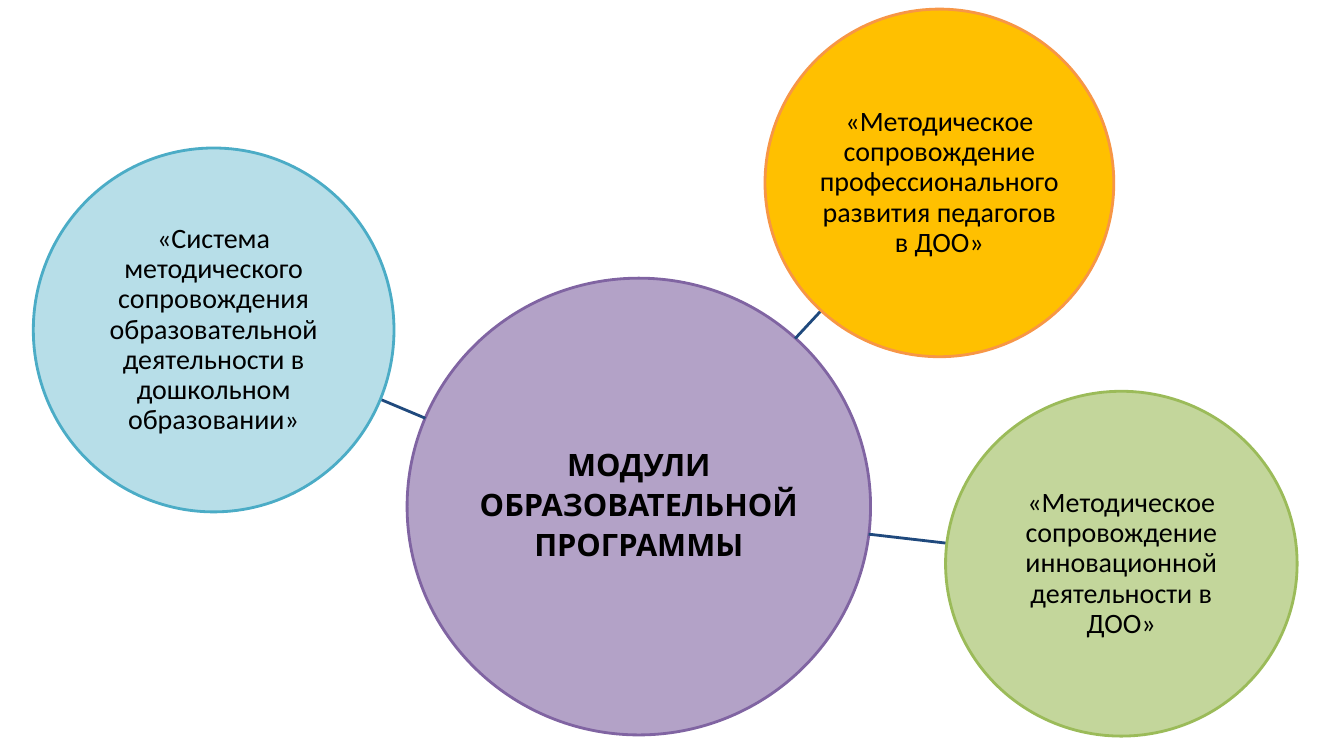
"""Build a slide with a central circle and the three programme modules around it."""
import pptx
import pptx.dml.color
import pptx.enum.shapes
import pptx.enum.text
import pptx.oxml.ns
import pptx.util
from lxml import etree

Cm = pptx.util.Cm
Pt = pptx.util.Pt
RGBColor = pptx.dml.color.RGBColor

BLACK = RGBColor(0x00, 0x00, 0x00)
NAVY = RGBColor(0x1F, 0x49, 0x7D)
PURPLE = RGBColor(0x80, 0x64, 0xA2)
LIGHT_PURPLE = RGBColor(0xB3, 0xA2, 0xC7)
ORANGE = RGBColor(0xF7, 0x96, 0x46)
GOLD = RGBColor(0xFF, 0xC0, 0x00)
GREEN = RGBColor(0x9B, 0xBB, 0x59)
LIGHT_GREEN = RGBColor(0xC3, 0xD6, 0x9B)
TEAL = RGBColor(0x4B, 0xAC, 0xC6)
LIGHT_TEAL = RGBColor(0xB7, 0xDE, 0xE8)

LINE_WIDTH = Pt(2)
CENTRE = ["МОДУЛИ", "ОБРАЗОВАТЕЛЬНОЙ", "ПРОГРАММЫ"]
MODULES = [
    ("«Методическое сопровождение профессионального развития педагогов в ДОО»",
     (19.28, 0.23, 8.79, 8.76), GOLD, ORANGE, (20.04, 8.53, 20.7, 7.82)),
    ("«Методическое сопровождение инновационной деятельности в ДОО»",
     (23.83, 9.86, 8.86, 8.69), LIGHT_GREEN, GREEN, (21.89, 13.46, 23.88, 13.69)),
    ("«Система методического сопровождения образовательной деятельности "
     "в дошкольном образовании»",
     (0.84, 3.73, 9.09, 9.17), LIGHT_TEAL, TEAL, (10.72, 10.54, 9.58, 10.06)),
]


def add_circle(s, lines, box, fill, outline, font="Calibri", size=20, bold=False):
    """Add an ellipse with one centred paragraph per line."""
    sp = s.shapes.add_shape(pptx.enum.shapes.MSO_SHAPE.OVAL, *map(Cm, box))
    sp.shadow.inherit = False
    sp.fill.solid()
    sp.fill.fore_color.rgb = fill
    sp.line.color.rgb = outline
    sp.line.width = LINE_WIDTH
    tf = sp.text_frame
    tf.word_wrap = True
    tf.vertical_anchor = pptx.enum.text.MSO_ANCHOR.MIDDLE
    tf.margin_left = tf.margin_right = tf.margin_top = tf.margin_bottom = Cm(0.03)
    tf.text = "\n".join(lines)
    for p in tf.paragraphs:
        p.alignment = pptx.enum.text.PP_ALIGN.CENTER
        p.line_spacing = 0.9
        p.space_after = Pt(4.5)
        for r in p.runs:
            r.font.name = font
            r.font.size = Pt(size)
            r.font.bold = bold
            r.font.color.rgb = BLACK


def add_link(s, ends):
    """Add a straight line between two circles."""
    cxn = s.shapes.add_connector(
        pptx.enum.shapes.MSO_CONNECTOR.STRAIGHT, *map(Cm, ends))
    cxn.line.color.rgb = NAVY
    cxn.line.width = LINE_WIDTH
    etree.SubElement(cxn._element.spPr, pptx.oxml.ns.qn("a:effectLst"))


def main():
    """Build the slide and save it."""
    prs = pptx.Presentation()
    prs.slide_width = Cm(33.87)
    prs.slide_height = Cm(19.05)
    s = prs.slides.add_slide(prs.slide_layouts.get_by_name("Blank"))
    add_circle(s, CENTRE, (10.26, 7.01, 11.68, 11.51), LIGHT_PURPLE, PURPLE,
               font="League Spartan", size=22, bold=True)
    for text, box, fill, outline, ends in MODULES:
        add_link(s, ends)
        add_circle(s, [text], box, fill, outline)
    prs.save("out.pptx")


if __name__ == "__main__":
    main()
